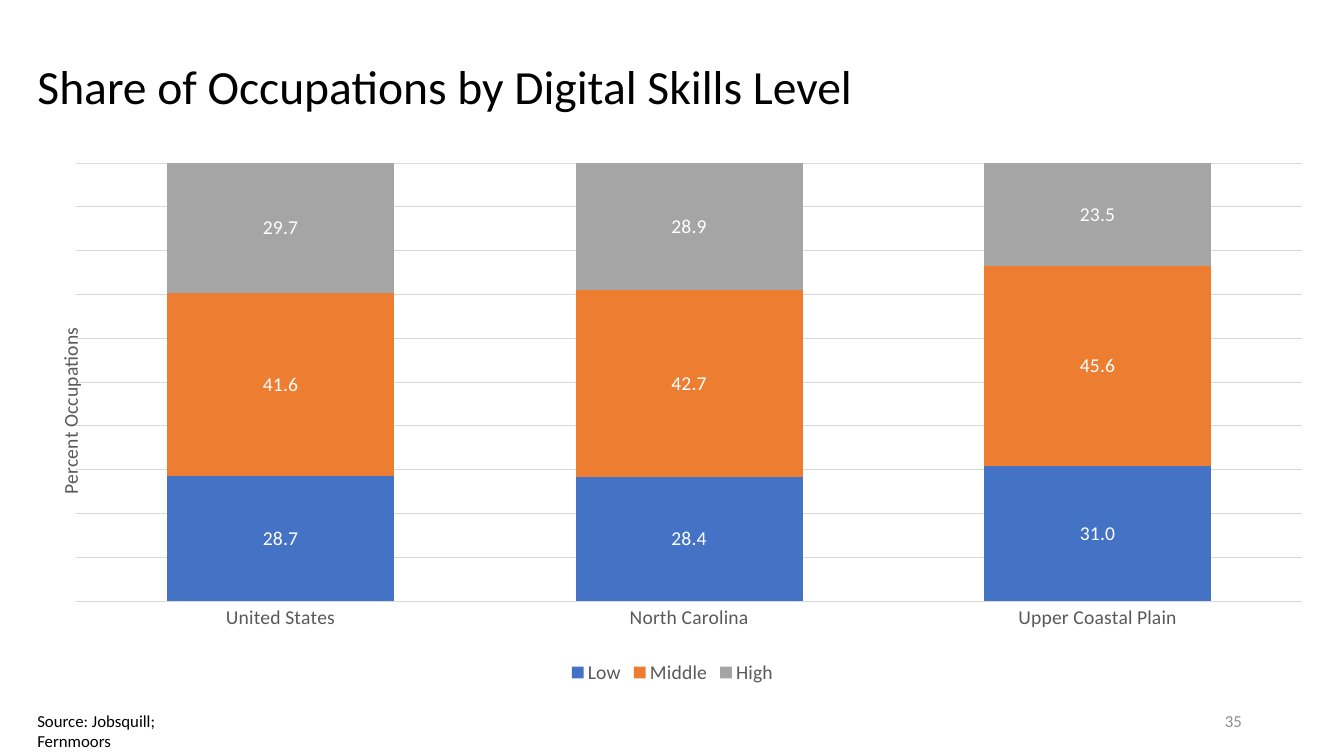
from lxml import etree
from pptx import Presentation
from pptx import util as u
from pptx.chart.data import CategoryChartData
from pptx.dml.color import RGBColor
from pptx.enum import chart as ch, text as tx
from pptx.oxml.ns import qn

FACE = "Calibri"
GREY, RULE = "595959", "D9D9D9"
PLACES = ["United States", "North Carolina", "Upper Coastal Plain"]
LEVELS = [
    ("Low", "4472C4", (28.7, 28.4, 31.0)),
    ("Middle", "ED7D31", (41.6, 42.7, 45.6)),
    ("High", "A5A5A5", (29.7, 28.9, 23.5)),
]


def paint(color, code):
    color.rgb = RGBColor.from_string(code)


def style(font, size, code):
    font.name, font.size, font.bold = FACE, u.Pt(size), False
    paint(font.color, code)


def rule(line):
    paint(line.color, RULE)
    line.width = u.Pt(0.75)


def write(frame, words, size, code, align=tx.PP_ALIGN.LEFT, anchor=tx.MSO_ANCHOR.MIDDLE):
    frame.text = words
    frame.vertical_anchor = anchor
    par = frame.paragraphs[0]
    par.alignment = align
    style(par.runs[0].font, size, code)
    return par


def head(slide, words):
    title = slide.shapes.title
    title.left, title.top = u.Cm(0.69), u.Cm(0.86)
    title.width, title.height = u.Cm(32.41), u.Cm(2.77)
    par = write(title.text_frame, words, 34, "000000")
    par.line_spacing = 0.9


def note(slide, box, words, code, wrap=True, **kind):
    frame = slide.shapes.add_textbox(*map(u.Cm, box)).text_frame
    frame.word_wrap = wrap
    write(frame, words, 12, code, **kind)


def place(node, index, **spots):
    """Give a chart part a manual layout, in shares of the chart area."""
    for old in node.findall(qn("c:layout")):
        node.remove(old)
    layout = etree.Element(qn("c:layout"))
    manual = etree.SubElement(layout, qn("c:manualLayout"))
    if "w" in spots:
        etree.SubElement(manual, qn("c:layoutTarget")).set("val", "inner")
    for key in "xy":
        etree.SubElement(manual, qn(f"c:{key}Mode")).set("val", "edge")
    for key, share in spots.items():
        etree.SubElement(manual, qn(f"c:{key}")).set("val", str(share))
    node.insert(index, layout)


def stack(slide, box):
    data = CategoryChartData(number_format="0.0")
    data.categories = PLACES
    for name, _, shares in LEVELS:
        data.add_series(name, shares)
    kind = ch.XL_CHART_TYPE.COLUMN_STACKED_100
    chart = slide.shapes.add_chart(kind, *map(u.Cm, box), data).chart
    style(chart.font, 14, "000000")
    chart.has_title = False

    # Bars and their labels
    plot = chart.plots[0]
    plot.gap_width, plot.overlap = 80, 100
    plot.vary_by_categories = False
    for bar, (_, code, _) in zip(plot.series, LEVELS):
        bar.format.fill.solid()
        paint(bar.format.fill.fore_color, code)
        tags = bar.data_labels
        tags.show_value = True
        tags.number_format, tags.number_format_is_linked = "0.0", False
        style(tags.font, 14, "FFFFFF")

    # Axes
    cats, vals = chart.category_axis, chart.value_axis
    cats.major_tick_mark = ch.XL_TICK_MARK.NONE
    style(cats.tick_labels.font, 14, GREY)
    rule(cats.format.line)
    rule(vals.major_gridlines.format.line)
    vals.visible = False
    label = vals.axis_title
    frame = label.text_frame
    frame.text = "Percent Occupations"
    style(frame.paragraphs[0].runs[0].font, 14, GREY)
    turn = label._element.find(".//" + qn("a:bodyPr"))
    turn.set("rot", "-5400000")
    turn.set("vert", "horz")

    # Legend and layout
    chart.has_legend = True
    chart.legend.position = ch.XL_LEGEND_POSITION.BOTTOM
    chart.legend.include_in_layout = False
    style(chart.legend.font, 14, GREY)
    place(label._element, 1, x=0.02, y=0.33)
    area = chart._chartSpace.find(".//" + qn("c:plotArea"))
    place(area, 0, x=0.038, y=0.035, w=0.95, h=0.805)


def main():
    deck = Presentation()
    deck.slide_width, deck.slide_height = u.Cm(33.87), u.Cm(19.05)
    slide = deck.slides.add_slide(deck.slide_layouts[5])
    head(slide, "Share of Occupations by Digital Skills Level")
    stack(slide, (0.69, 3.63, 32.51, 13.72))
    # Footer
    note(slide, (23.93, 17.65, 7.62, 1.02), "35", "8C8C8C", align=tx.PP_ALIGN.RIGHT)
    note(slide, (0.69, 17.78, 5.36, 0.76), "Source: Jobsquill; Fernmoors", "000000",
         wrap=False, anchor=tx.MSO_ANCHOR.TOP)
    deck.save("out.pptx")


if __name__ == "__main__":
    main()
